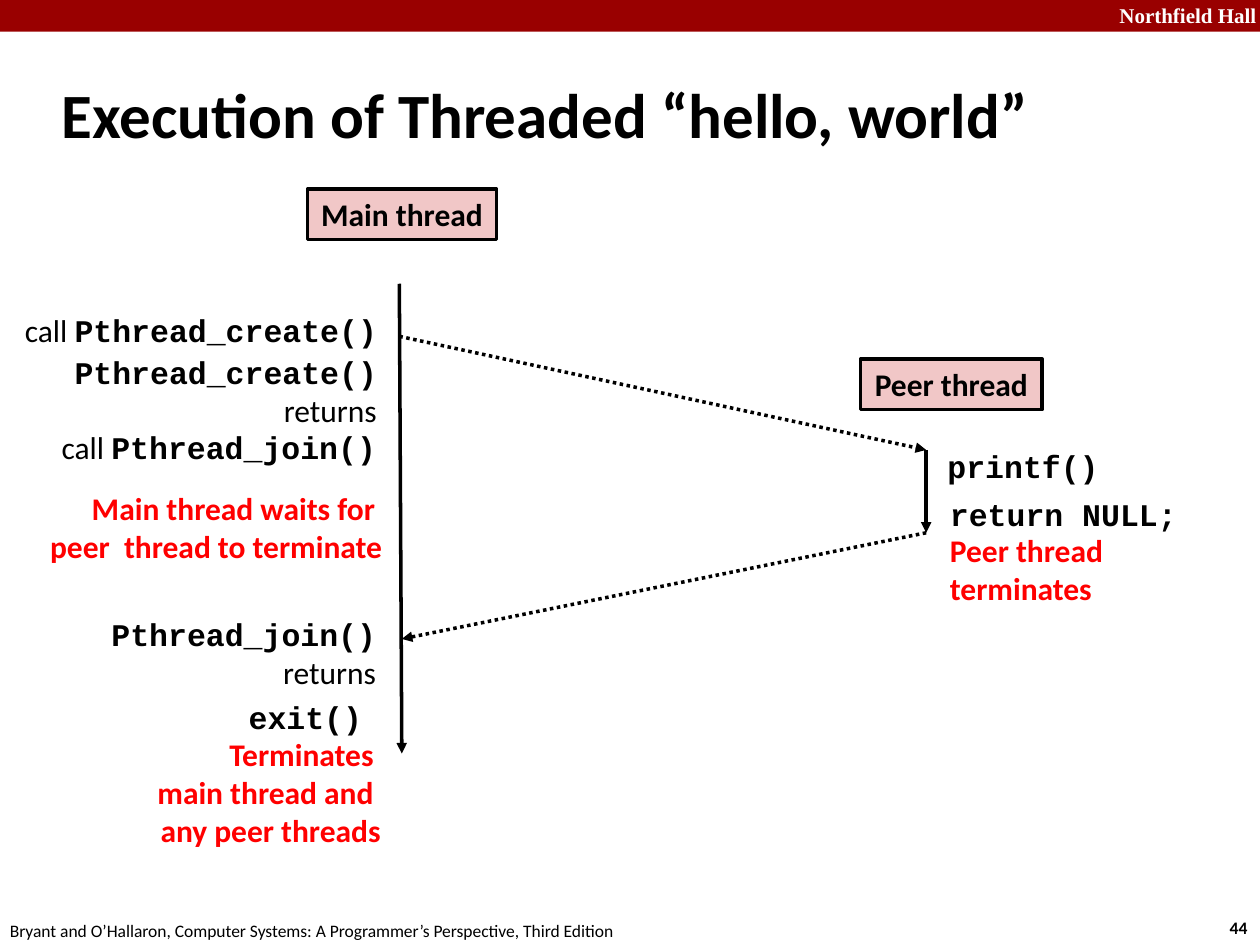
from lxml.etree import SubElement
from pptx import Presentation
from pptx.dml.color import RGBColor
from pptx.enum.dml import MSO_LINE
from pptx.enum.shapes import MSO_CONNECTOR, MSO_SHAPE
from pptx.enum.text import MSO_ANCHOR, PP_ALIGN
from pptx.oxml.ns import qn
from pptx.util import Cm, Pt

BLACK = RGBColor(0x00, 0x00, 0x00)
WHITE = RGBColor(0xFF, 0xFF, 0xFF)
RED = RGBColor(0xFF, 0x00, 0x00)
DARK_RED = RGBColor(0x99, 0x00, 0x00)
PINK = RGBColor(0xF1, 0xC7, 0xC7)

LEFT, CENTER, RIGHT = PP_ALIGN.LEFT, PP_ALIGN.CENTER, PP_ALIGN.RIGHT

HEADING = ("Calibri", 36, True, BLACK)
PLAIN = ("Calibri", 18, False, BLACK)
LABEL = ("Calibri", 18, True, BLACK)
STATE = ("Calibri", 18, True, RED)
CODE = ("Courier New", 18, True, BLACK)
SCHOOL = ("Times New Roman", 12, True, WHITE)
SOURCE = ("Calibri", 10, False, BLACK)
NUMBER = ("Calibri", 10, True, BLACK)

TITLE = [[("Execution of Threaded “hello, world”", HEADING)]]

THREADS = [
    ("Main thread", (6.2, 3.81, 3.81, 1.02)),
    ("Peer thread", (17.35, 7.24, 3.66, 1.02)),
]

TEXTS = [
    ((21.95, -0.08, 3.63, 0.76), RIGHT, True, [[("Northfield Hall", SCHOOL)]]),
    ((24.54, 18.36, 0.94, 0.69), LEFT, False, [[("44", NUMBER)]]),
    ((-0.05, 18.42, 12.9, 0.69), LEFT, False, [[(
        "Bryant and O’Hallaron, Computer Systems: "
        "A Programmer’s Perspective, Third Edition", SOURCE)]]),
    ((0.03, 6.15, 7.82, 1.02), RIGHT, False,
     [[("call ", PLAIN), ("Pthread_create()", CODE)]]),
    ((1.17, 6.99, 6.68, 1.8), RIGHT, False,
     [[("Pthread_create()", CODE)], [("returns", PLAIN)]]),
    ((0.79, 8.51, 7.04, 1.02), RIGHT, False,
     [[("call ", PLAIN), ("Pthread_join()", CODE)]]),
    ((0.64, 9.73, 7.32, 1.8), RIGHT, False,
     [[("Main thread waits for ", STATE)],
      [("peer  thread to terminate", STATE)]]),
    ((0.84, 12.27, 6.99, 1.8), RIGHT, True,
     [[("Pthread_join() ", CODE), ("returns", PLAIN)]]),
    ((2.9, 13.94, 5.03, 3.33), RIGHT, False,
     [[("exit() ", CODE)], [("Terminates ", STATE)],
      [("main thread and ", STATE)], [("any peer threads", STATE)]]),
    ((18.85, 8.89, 3.58, 1.02), LEFT, False, [[("printf()", CODE)]]),
    ((18.9, 9.86, 5.28, 1.02), LEFT, False, [[("return NULL;", CODE)]]),
    ((18.9, 10.59, 3.66, 1.8), LEFT, False,
     [[("Peer thread", STATE)], [("terminates", STATE)]]),
]

MAIN_START, MAIN_END = (8.05, 5.72), (8.1, 15.19)
CREATE, JOIN = (8.05, 6.78), (8.1, 12.88)
PEER_START, PEER_END = (18.67, 9.07), (18.67, 10.74)
ARROWS = [
    (MAIN_START, MAIN_END, MSO_LINE.SOLID),
    (PEER_START, PEER_END, MSO_LINE.SOLID),
    (CREATE, PEER_START, MSO_LINE.ROUND_DOT),
    (PEER_END, JOIN, MSO_LINE.ROUND_DOT),
]


def lengths(values):
    return [Cm(value) for value in values]


def write(frame, lines, align, wrap, anchor=MSO_ANCHOR.MIDDLE):
    frame.word_wrap = wrap
    frame.vertical_anchor = anchor
    frame.text = "\n".join("".join(text for text, _ in line) for line in lines)
    for paragraph, line in zip(frame.paragraphs, lines):
        paragraph.alignment = align
        paragraph.text = ""
        for text, (face, size, bold, color) in line:
            run = paragraph.add_run()
            run.text = text
            run.font.name = face
            run.font.size = Pt(size)
            run.font.bold = bold
            run.font.color.rgb = color


def add_box(slide, place, fill):
    box = slide.shapes.add_shape(MSO_SHAPE.RECTANGLE, *lengths(place))
    box.shadow.inherit = False
    box.fill.solid()
    box.fill.fore_color.rgb = fill
    return box


def add_arrow(slide, start, end, dash):
    arrow = slide.shapes.add_connector(
        MSO_CONNECTOR.STRAIGHT, *lengths(start + end))
    arrow.line.color.rgb = BLACK
    arrow.line.width = Pt(2)
    arrow.line.dash_style = dash
    properties = arrow.element.spPr
    SubElement(properties.find(qn("a:ln")), qn("a:tailEnd"), type="triangle")
    SubElement(properties, qn("a:effectLst"))


def main():
    deck = Presentation()
    deck.slide_width, deck.slide_height = Cm(25.4), Cm(19.05)
    slide = deck.slides.add_slide(deck.slide_layouts[5])

    title = slide.shapes.title
    title.left, title.top, title.width, title.height = lengths(
        (0.99, 1.22, 21.08, 2.11))
    write(title.text_frame, TITLE, LEFT, True)

    banner = add_box(slide, (0, 0, 25.4, 0.64), DARK_RED)
    banner.line.fill.background()

    for name, place in THREADS:
        thread = add_box(slide, place, PINK)
        thread.line.color.rgb = BLACK
        thread.line.width = Pt(2)
        write(thread.text_frame, [[(name, LABEL)]], CENTER, False)

    for start, end, dash in ARROWS:
        add_arrow(slide, start, end, dash)

    for place, align, wrap, lines in TEXTS:
        label = slide.shapes.add_textbox(*lengths(place))
        write(label.text_frame, lines, align, wrap, MSO_ANCHOR.TOP)

    deck.save("out.pptx")


if __name__ == "__main__":
    main()
